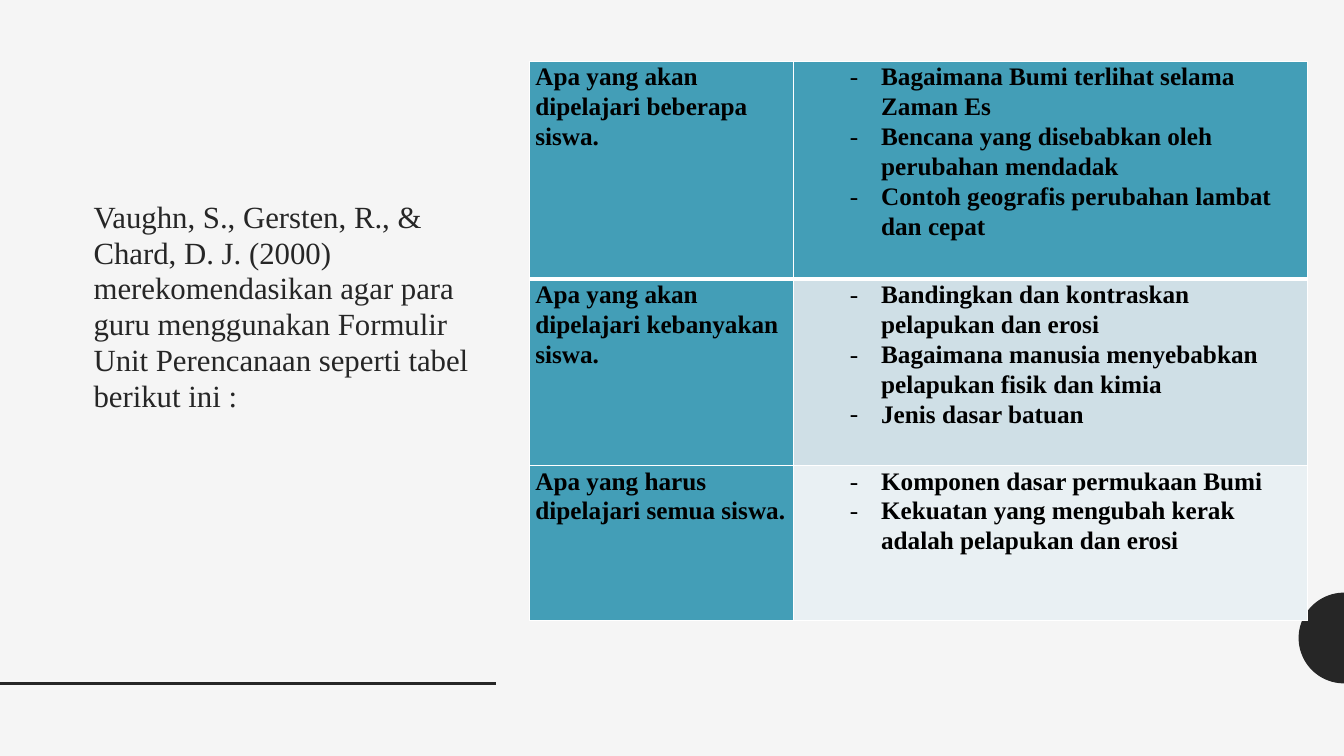
from math import cos, pi, sin

from lxml import etree
from pptx import Presentation
from pptx.dml.color import RGBColor
from pptx.enum.shapes import MSO_CONNECTOR
from pptx.enum.text import MSO_ANCHOR, PP_ALIGN
from pptx.oxml.ns import qn
from pptx.util import Inches, Pt

STRAIGHT = MSO_CONNECTOR.STRAIGHT
TOP = MSO_ANCHOR.TOP
LEFT = PP_ALIGN.LEFT

THEME = {
    "font": "Times New Roman",
    "background": RGBColor.from_string("F5F5F5"),
    "dark": RGBColor.from_string("262626"),
    "black": RGBColor.from_string("000000"),
    "teal": RGBColor.from_string("439EB7"),
    "pale": RGBColor.from_string("CFDFE6"),
    "paler": RGBColor.from_string("E9F0F3"),
    "border": "FFFFFF",
    "title_size": Pt(22),
    "table_size": Pt(18),
}

INTRO = (
    "Vaughn, S., Gersten, R., & Chard, D. J. (2000) merekomendasikan agar para "
    "guru menggunakan Formulir Unit Perencanaan seperti tabel berikut ini :"
)

# Row height, question, topics, fill of the topics cell
UNIT_ROWS = [
    (2.16, "Apa yang akan dipelajari beberapa siswa.", [
        "Bagaimana Bumi terlihat selama Zaman Es",
        "Bencana yang disebabkan oleh perubahan mendadak",
        "Contoh geografis perubahan lambat dan cepat",
    ], THEME["teal"]),
    (1.85, "Apa yang akan dipelajari kebanyakan siswa.", [
        "Bandingkan dan kontraskan pelapukan dan erosi",
        "Bagaimana manusia menyebabkan pelapukan fisik dan kimia",
        "Jenis dasar batuan",
    ], THEME["pale"]),
    (1.54, "Apa yang harus dipelajari semua siswa.", [
        "Komponen dasar permukaan Bumi",
        "Kekuatan yang mengubah kerak adalah pelapukan dan erosi",
    ], THEME["paler"]),
]


def write_paragraph(paragraph, text, spacing, formats):
    paragraph.alignment = LEFT
    paragraph.line_spacing = spacing
    run = paragraph.add_run()
    run.text = text
    run.font.color.rgb = formats["color"]
    for name in ("name", "size", "bold"):
        setattr(run.font, name, formats[name])


def add_border(cell, side, width):
    line = etree.SubElement(cell._tc.get_or_add_tcPr(), qn("a:" + side), w=str(Pt(width)))
    solid = etree.SubElement(line, qn("a:solidFill"))
    etree.SubElement(solid, qn("a:srgbClr"), val=THEME["border"])


deck = Presentation()
deck.slide_width, deck.slide_height = Inches(13.33), Inches(7.5)
slide = deck.slides.add_slide(deck.slide_layouts[6])
slide.background.fill.solid()
slide.background.fill.fore_color.rgb = THEME["background"]

# Half disc at the right edge
radius, steps = 0.45, 48
edge_x, edge_y = 13.33, 6.33
arc = [
    (Inches(edge_x - radius * sin(pi * i / steps)), Inches(edge_y - radius * cos(pi * i / steps)))
    for i in range(steps + 1)
]
outline = slide.shapes.build_freeform(*arc[0])
outline.add_line_segments(arc[1:], close=True)
half_disc = outline.convert_to_shape()
half_disc.shadow.inherit = False
half_disc.fill.solid()
half_disc.fill.fore_color.rgb = THEME["dark"]
half_disc.line.fill.background()

# Rule at the lower left
rule = slide.shapes.add_connector(STRAIGHT, 0, Inches(6.78), Inches(4.92), Inches(6.78))
rule.line.color.rgb = THEME["dark"]
rule.line.width = Pt(2)
etree.SubElement(rule._element.spPr, qn("a:effectLst"))

# Introduction
intro = slide.shapes.add_textbox(Inches(0.83), Inches(0.61), Inches(4.19), Inches(5.42))
intro_frame = {"word_wrap": True, "vertical_anchor": TOP, "margin_top": Inches(1.37)}
for name, value in intro_frame.items():
    setattr(intro.text_frame, name, value)
intro_format = {"name": THEME["font"], "size": THEME["title_size"], "bold": False,
                "color": THEME["dark"]}
write_paragraph(intro.text_frame.paragraphs[0], INTRO, 0.97, intro_format)

# Unit planning table
unit_table = slide.shapes.add_table(
    len(UNIT_ROWS), 2, Inches(5.25), Inches(0.61), Inches(7.72), Inches(5.55)
).table
unit_table.horz_banding = False
for column, width in zip(unit_table.columns, (2.62, 5.1)):
    column.width = Inches(width)

cell_frame = {"margin_left": Inches(0.06), "margin_right": Inches(0.06),
              "margin_top": 0, "margin_bottom": 0, "vertical_anchor": TOP}
cell_format = {"name": THEME["font"], "size": THEME["table_size"], "bold": True,
               "color": THEME["black"]}

for r, (height, question, topics, topic_fill) in enumerate(UNIT_ROWS):
    unit_table.rows[r].height = Inches(height)
    cells = [([question], THEME["teal"], False), (topics, topic_fill, True)]
    for c, (lines, fill, bulleted) in enumerate(cells):
        cell = unit_table.cell(r, c)
        for name, value in cell_frame.items():
            setattr(cell, name, value)

        # The rule under the first row is thicker
        widths = {"lnL": 1, "lnR": 1, "lnT": 3 if r == 1 else 1, "lnB": 3 if r == 0 else 1}
        for side, width in widths.items():
            add_border(cell, side, width)
        cell.fill.solid()
        cell.fill.fore_color.rgb = fill

        for i, line in enumerate(lines):
            frame = cell.text_frame
            paragraph = frame.add_paragraph() if i else frame.paragraphs[0]
            write_paragraph(paragraph, line, 1.07, cell_format)
            if bulleted:
                props = paragraph._p.get_or_add_pPr()
                props.set("marL", str(Inches(0.81)))
                props.set("indent", str(Inches(-0.31)))
                etree.SubElement(props, qn("a:buFont"), typeface=THEME["font"])
                etree.SubElement(props, qn("a:buChar"), char="-")

deck.save("out.pptx")
